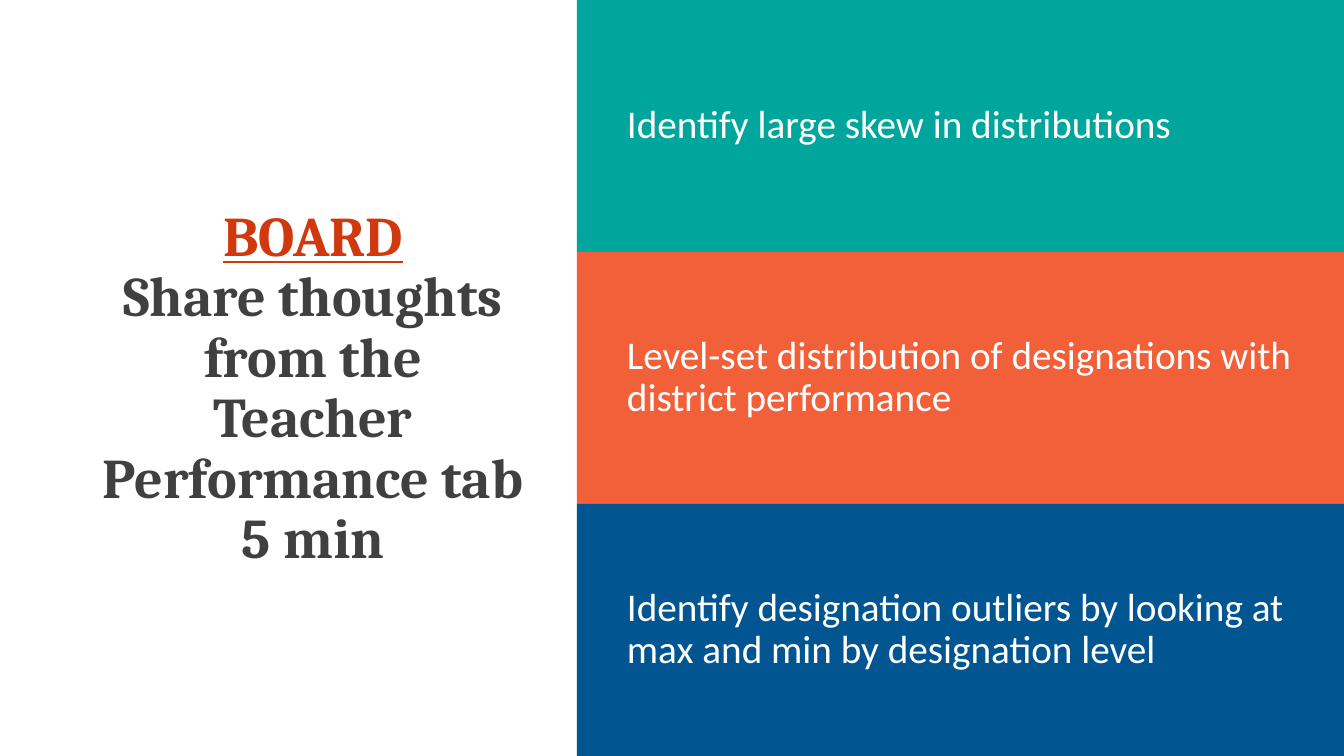
from dataclasses import dataclass

from pptx import Presentation
from pptx.dml.color import RGBColor
from pptx.enum.shapes import MSO_SHAPE
from pptx.enum.text import MSO_ANCHOR, MSO_AUTO_SIZE, PP_ALIGN
from pptx.util import Emu, Pt

PAGE_WIDTH, PAGE_HEIGHT = 1344, 756
PANEL_LEFT = 577


def px(length):
    return Emu(round(length * 914400 / 100.8))


@dataclass(frozen=True)
class Theme:
    heading_font: str = "Cambria"
    body_font: str = "Calibri"
    heading_size: int = 40
    body_size: int = 28
    accent: str = "D0380E"
    ink: str = "404040"
    white: str = "FFFFFF"
    teal: str = "00A69B"
    orange: str = "F16038"
    blue: str = "015692"


class PageBuilder:
    def __init__(self, page, theme):
        self.page = page
        self.theme = theme

    def place(self, shape, left, top, width, height):
        shape.left, shape.top = px(left), px(top)
        shape.width, shape.height = px(width), px(height)

    def style(self, frame, align, font, size, bold=False):
        """Set the wrapping and paragraph style; return the paragraph."""
        frame.word_wrap = True
        frame.auto_size = MSO_AUTO_SIZE.NONE
        frame.vertical_anchor = MSO_ANCHOR.MIDDLE
        para = frame.paragraphs[0]
        para.alignment = align
        para.line_spacing = 0.9
        para.font.name = font
        para.font.size = Pt(size)
        para.font.bold = bold
        return para

    def title(self, lines, left, top, width, height):
        """Fill the title with lines, the first one underlined."""
        box = self.page.shapes.title
        self.place(box, left, top, width, height)
        para = self.style(box.text_frame, PP_ALIGN.CENTER,
                          self.theme.heading_font, self.theme.heading_size, bold=True)
        for number, line in enumerate(lines):
            if number:
                para.add_line_break()
            span = para.add_run()
            span.text = line
            span.font.underline = number == 0
            colour = self.theme.ink if number else self.theme.accent
            span.font.color.rgb = RGBColor.from_string(colour)

    def panel(self, text, fill, left, top, width, height):
        """Add a coloured rectangle with left-aligned text."""
        box = self.page.shapes.add_shape(MSO_SHAPE.RECTANGLE, 0, 0, 0, 0)
        self.place(box, left, top, width, height)
        box.shadow.inherit = False
        box.fill.solid()
        box.fill.fore_color.rgb = RGBColor.from_string(fill)
        box.line.fill.background()
        frame = box.text_frame
        frame.margin_left = frame.margin_right = px(50)
        para = self.style(frame, PP_ALIGN.LEFT, self.theme.body_font, self.theme.body_size)
        para.font.color.rgb = RGBColor.from_string(self.theme.white)
        para.add_run().text = text


def main():
    deck = Presentation()
    deck.slide_width, deck.slide_height = px(PAGE_WIDTH), px(PAGE_HEIGHT)
    theme = Theme()
    builder = PageBuilder(deck.slides.add_slide(deck.slide_layouts[5]), theme)

    # Discussion prompt on the left
    builder.title(["BOARD", "Share thoughts from the Teacher Performance tab", "5 min"],
                  92, 104, 442, 571)

    # Three equal panels on the right
    panels = [
        ("Identify large skew in distributions", theme.teal),
        ("Level-set distribution of designations with district performance", theme.orange),
        ("Identify designation outliers by looking at max and min by designation level",
         theme.blue),
    ]
    height = PAGE_HEIGHT // len(panels)
    for row, (text, fill) in enumerate(panels):
        builder.panel(text, fill, PANEL_LEFT, row * height, PAGE_WIDTH - PANEL_LEFT, height)

    deck.save("out.pptx")


if __name__ == "__main__":
    main()
